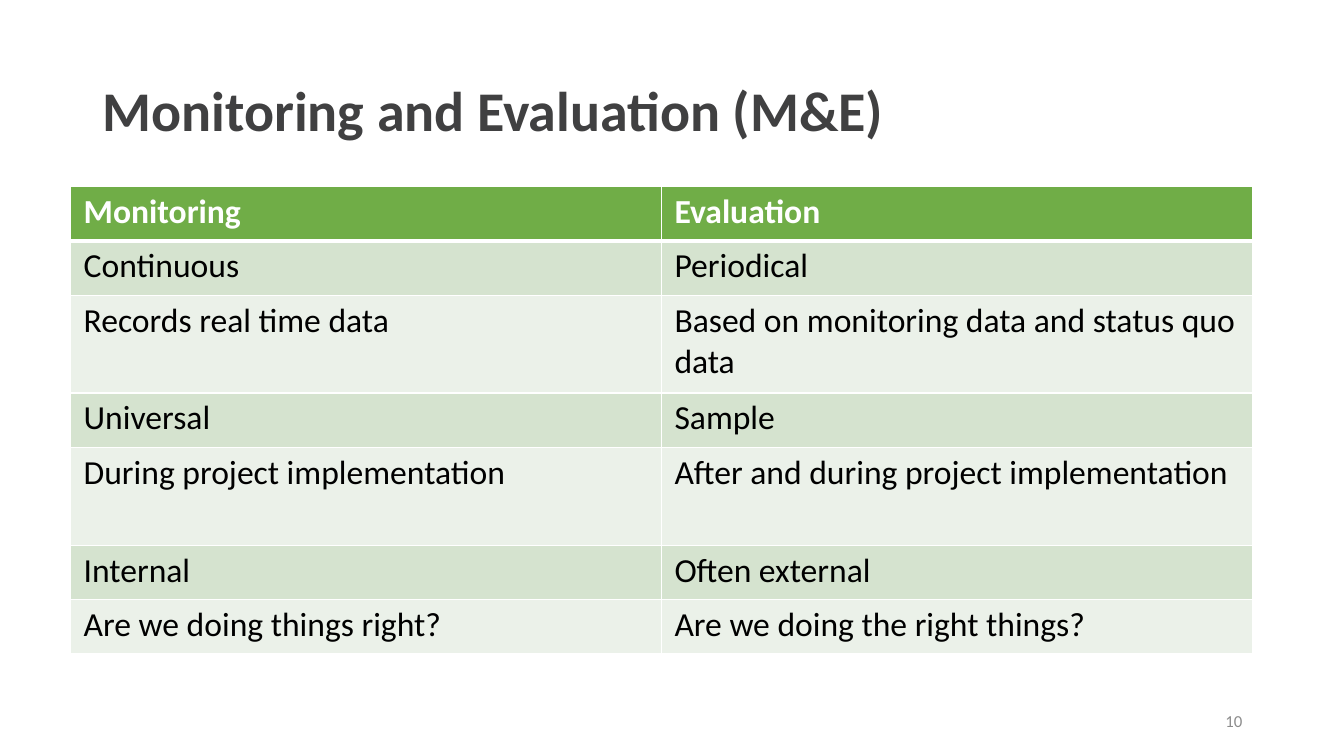
from dataclasses import dataclass

from lxml.etree import SubElement
from pptx import Presentation
from pptx.dml.color import RGBColor
from pptx.enum.text import MSO_ANCHOR as Anchor, PP_ALIGN as Align
from pptx.oxml.ns import qn
from pptx.slide import Slide
from pptx.table import _Cell as Cell
from pptx.text.text import _Paragraph as Paragraph
from pptx.util import Emu, Pt

EMU_PER_PX = 9144  # 100 px to the inch
FONT = "Calibri"
WHITE = RGBColor(0xFF, 0xFF, 0xFF)
BLACK = RGBColor(0x00, 0x00, 0x00)
TITLE_GREY = RGBColor(0x40, 0x40, 0x41)
NUMBER_GREY = RGBColor(0x8C, 0x8C, 0x8C)
HEADER_GREEN = RGBColor(0x70, 0xAD, 0x47)
BAND_DARK = RGBColor(0xD5, 0xE3, 0xCF)
BAND_LIGHT = RGBColor(0xEB, 0xF1, 0xE9)

COLUMN_WIDTH = 586
LINE_ROW, DOUBLE_ROW = 54, 97
THIN, THICK = 1, 3


@dataclass(frozen=True)
class Label:
    text: str
    left: int
    top: int
    width: int
    height: int
    size: int
    color: RGBColor
    bold: bool = False
    align: Align = Align.LEFT
    line_spacing: float = 1.0


@dataclass(frozen=True)
class Comparison:
    monitoring: str
    evaluation: str
    height: int = LINE_ROW


LABELS = [
    Label("Monitoring and Evaluation (M&E)", 92, 40, 1150, 145, 40, TITLE_GREY,
          bold=True, line_spacing=0.9),
    Label("10", 942, 695, 300, 40, 12, NUMBER_GREY, align=Align.RIGHT),
]
COMPARISONS = [
    Comparison("Monitoring", "Evaluation"),
    Comparison("Continuous", "Periodical"),
    Comparison("Records real time data",
               "Based on monitoring data and status quo data", DOUBLE_ROW),
    Comparison("Universal", "Sample"),
    Comparison("During project implementation",
               "After and during project implementation", DOUBLE_ROW),
    Comparison("Internal", "Often external"),
    Comparison("Are we doing things right?", "Are we doing the right things?"),
]


def px(length: int) -> Emu:
    return Emu(length * EMU_PER_PX)


def style_font(paragraph: Paragraph, size: int, color: RGBColor, bold: bool) -> None:
    font = paragraph.font
    font.name = FONT
    font.size = Pt(size)
    font.bold = bold
    font.color.rgb = color


def add_label(slide: Slide, label: Label) -> None:
    shape = slide.shapes.add_textbox(
        px(label.left), px(label.top), px(label.width), px(label.height))
    frame = shape.text_frame
    frame.word_wrap = True
    frame.vertical_anchor = Anchor.MIDDLE
    paragraph = frame.paragraphs[0]
    paragraph.text = label.text
    paragraph.alignment = label.align
    paragraph.line_spacing = label.line_spacing
    style_font(paragraph, label.size, label.color, label.bold)


def set_borders(cell: Cell, top: int, bottom: int) -> None:
    """Draw white borders; the sides are thin, top and bottom are in points."""
    properties = cell._tc.get_or_add_tcPr()
    widths = {"lnL": THIN, "lnR": THIN, "lnT": top, "lnB": bottom}
    for position, (side, width) in enumerate(widths.items()):
        line = SubElement(properties, qn(f"a:{side}"), w=str(Pt(width)))
        fill = SubElement(line, qn("a:solidFill"))
        SubElement(fill, qn("a:srgbClr"), val=str(WHITE))
        properties.insert(position, line)


def fill_cell(cell: Cell, text: str, row: int) -> None:
    is_header = row == 0
    cell.margin_left = cell.margin_right = px(13)
    cell.margin_top = cell.margin_bottom = px(5)
    cell.fill.solid()
    band = BAND_DARK if row % 2 else BAND_LIGHT
    cell.fill.fore_color.rgb = HEADER_GREEN if is_header else band
    set_borders(cell, THICK if row == 1 else THIN, THICK if is_header else THIN)
    paragraph = cell.text_frame.paragraphs[0]
    paragraph.text = text
    style_font(paragraph, 24, WHITE if is_header else BLACK, is_header)


def add_comparison_table(slide: Slide, comparisons: list[Comparison]) -> None:
    height = sum(comparison.height for comparison in comparisons)
    table = slide.shapes.add_table(
        len(comparisons), 2, px(70), px(185), px(2 * COLUMN_WIDTH), px(height)).table
    for row, comparison in enumerate(comparisons):
        table.rows[row].height = px(comparison.height)
        fill_cell(table.cell(row, 0), comparison.monitoring, row)
        fill_cell(table.cell(row, 1), comparison.evaluation, row)


def main() -> None:
    presentation = Presentation()
    presentation.slide_width = px(1333)
    presentation.slide_height = px(750)
    slide = presentation.slides.add_slide(presentation.slide_layouts[6])
    add_comparison_table(slide, COMPARISONS)
    for label in LABELS:
        add_label(slide, label)
    presentation.save("out.pptx")


if __name__ == "__main__":
    main()
